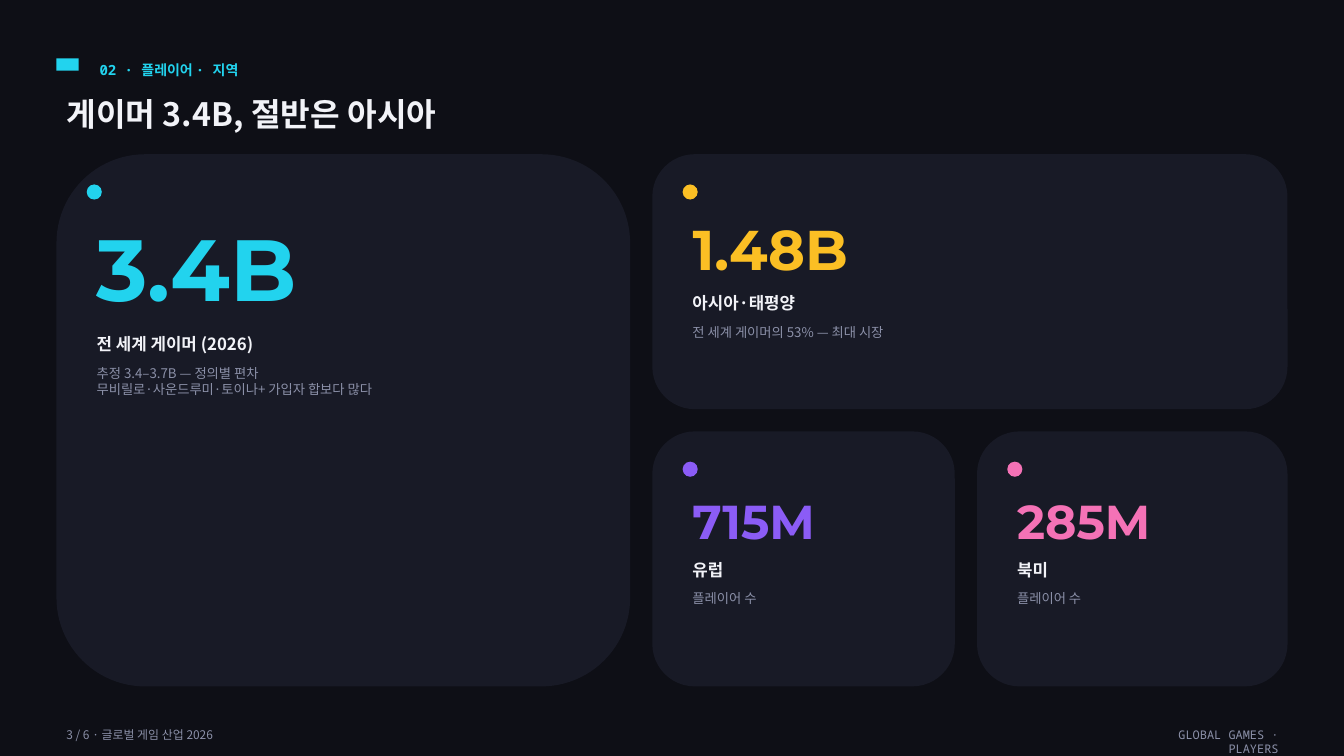
"""Build the slide on where the world's players live."""
from collections import namedtuple

from pptx import Presentation
from pptx.dml.color import RGBColor
from pptx.enum.shapes import MSO_SHAPE
from pptx.enum.text import MSO_ANCHOR, MSO_AUTO_SIZE, PP_ALIGN
from pptx.util import Inches, Pt

Style = namedtuple("Style", "size font color bold")
Card = namedtuple("Card", "column row columns rows number number_size label_offset color label details")


class Theme:
    """Colours, fonts and text styles."""
    background, panel = "0E0F16", "181A26"
    cyan, amber, violet, pink = "22D3EE", "FBBF24", "8B5CF6", "F472B6"
    white, gray = "F2F3F8", "8B90A8"
    sans, mono, display = "Noto Sans CJK KR", "Noto Sans Mono", "Montserrat"
    eyebrow = Style(10, mono, cyan, True)
    title = Style(23, sans, white, True)
    label = Style(12, sans, white, True)
    detail = Style(9.5, sans, gray, False)
    footer = Style(8.5, sans, gray, False)
    footer_mono = Style(8.5, mono, gray, False)


EYEBROW = "02 · 플레이어 · 지역"
TITLE = "게이머 3.4B, 절반은 아시아"
FOOTER_LEFT = "3 / 6 · 글로벌 게임 산업 2026"
FOOTER_RIGHT = "GLOBAL GAMES · PLAYERS"
CARDS = [
    Card(0, 0, 1, 2, "3.4B", 62, 1.73, Theme.cyan, "전 세계 게이머 (2026)",
         ["추정 3.4–3.7B — 정의별 편차", "무비릴로·사운드루미·토이나+ 가입자 합보다 많다"]),
    Card(1, 0, 2, 1, "1.48B", 40, 1.33, Theme.amber, "아시아·태평양",
         ["전 세계 게이머의 53% — 최대 시장"]),
    Card(1, 1, 1, 1, "715M", 34, 1.22, Theme.violet, "유럽", ["플레이어 수"]),
    Card(2, 1, 1, 1, "285M", 34, 1.22, Theme.pink, "북미", ["플레이어 수"]),
]
NUMBER_WIDTHS = {"3.4B": 2.33, "1.48B": 1.95, "715M": 1.6, "285M": 1.6}

LEFT, TOP, GAP, PADDING = 0.56, 1.53, 0.22, 0.3
COLUMN_WIDTHS = [5.69, 3, 3.08]
ROW_HEIGHTS = [2.53, 2.53]


def span(start, sizes, first, count):
    """Return the offset and extent of a run of grid tracks."""
    offset = start + sum(sizes[:first]) + GAP * first
    return offset, sum(sizes[first:first + count]) + GAP * (count - 1)


def place(shape, left, top, width, height):
    """Set the position and size of a shape in inches."""
    shape.left, shape.top = Inches(left), Inches(top)
    shape.width, shape.height = Inches(width), Inches(height)


def write(shape, lines, style, alignment=PP_ALIGN.LEFT):
    """Fill a shape with styled paragraphs."""
    frame = shape.text_frame
    frame.word_wrap = True
    frame.auto_size = MSO_AUTO_SIZE.SHAPE_TO_FIT_TEXT
    frame.vertical_anchor = MSO_ANCHOR.TOP
    for index, line in enumerate(lines):
        paragraph = frame.add_paragraph() if index else frame.paragraphs[0]
        paragraph.alignment = alignment
        run = paragraph.add_run()
        run.text = line
        run.font.size = Pt(style.size)
        run.font.name = style.font
        run.font.bold = style.bold
        run.font.color.rgb = RGBColor.from_string(style.color)


def add_text(slide, box, lines, style, alignment=PP_ALIGN.LEFT):
    """Add a styled text box."""
    shape = slide.shapes.add_textbox(*map(Inches, box))
    write(shape, lines, style, alignment)


def add_panel(slide, kind, box, color):
    """Add a plain filled shape."""
    shape = slide.shapes.add_shape(kind, *map(Inches, box))
    shape.shadow.inherit = False
    shape.fill.solid()
    shape.fill.fore_color.rgb = RGBColor.from_string(color)
    shape.line.fill.background()


def add_card(slide, card):
    """Add one figure card on the grid."""
    left, width = span(LEFT, COLUMN_WIDTHS, card.column, card.columns)
    top, height = span(TOP, ROW_HEIGHTS, card.row, card.rows)
    inner, text_width = left + PADDING, width - 2 * PADDING
    label_top = top + card.label_offset
    number_height = card.number_size * 1.2 / 72 + 0.1
    add_panel(slide, MSO_SHAPE.ROUNDED_RECTANGLE, (left, top, width, height), Theme.panel)
    add_panel(slide, MSO_SHAPE.OVAL, (inner, top + PADDING, 0.15, 0.15), card.color)
    add_text(slide, (inner, top + 0.55, NUMBER_WIDTHS[card.number], number_height),
             [card.number], Style(card.number_size, Theme.display, card.color, True))
    add_text(slide, (inner, label_top, text_width, 0.3), [card.label], Theme.label)
    add_text(slide, (inner, label_top + 0.31, text_width, 0.1 + 0.16 * len(card.details)),
             card.details, Theme.detail)


def main():
    """Assemble and save the slide."""
    presentation = Presentation()
    presentation.slide_width, presentation.slide_height = Inches(13.33), Inches(7.5)
    slide = presentation.slides.add_slide(presentation.slide_layouts[5])
    slide.background.fill.solid()
    slide.background.fill.fore_color.rgb = RGBColor.from_string(Theme.background)
    add_panel(slide, MSO_SHAPE.RECTANGLE, (LEFT, 0.58, 0.22, 0.12), Theme.cyan)
    add_text(slide, (0.89, 0.56, 1.66, 0.27), [EYEBROW], Theme.eyebrow)
    place(slide.shapes.title, LEFT, 0.89, 4.2, 0.49)
    write(slide.shapes.title, [TITLE], Theme.title)
    for card in CARDS:
        add_card(slide, card)
    add_text(slide, (LEFT, 7.17, 1.79, 0.24), [FOOTER_LEFT], Theme.footer)
    add_text(slide, (11.15, 7.17, 1.63, 0.24), [FOOTER_RIGHT], Theme.footer_mono, PP_ALIGN.RIGHT)
    presentation.save("out.pptx")


if __name__ == "__main__":
    main()
